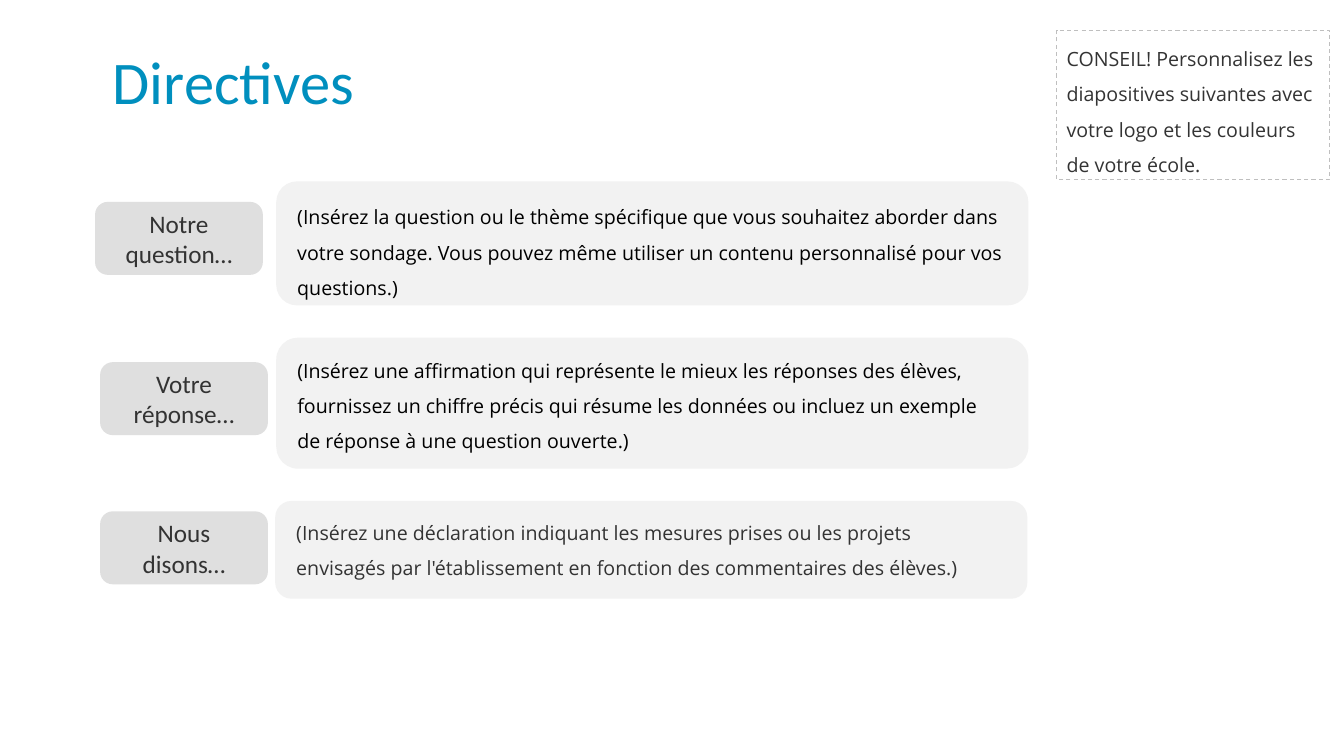
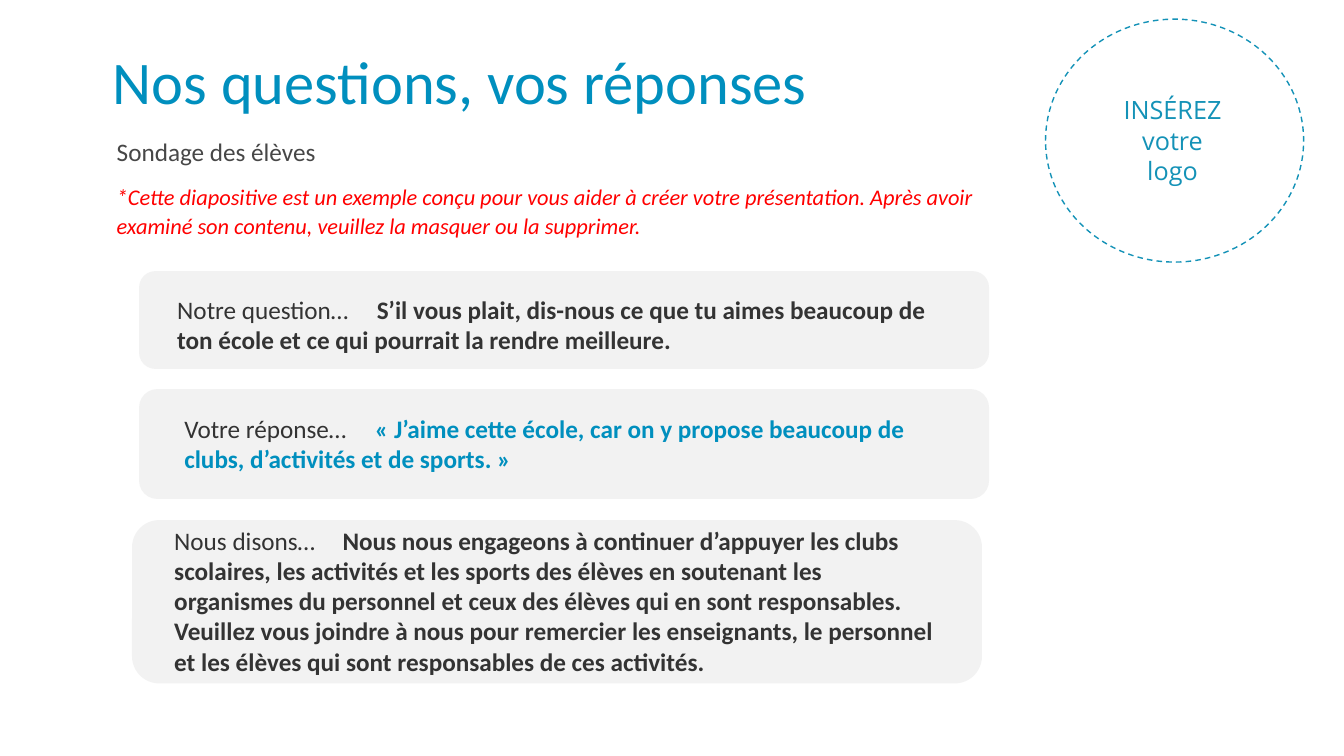
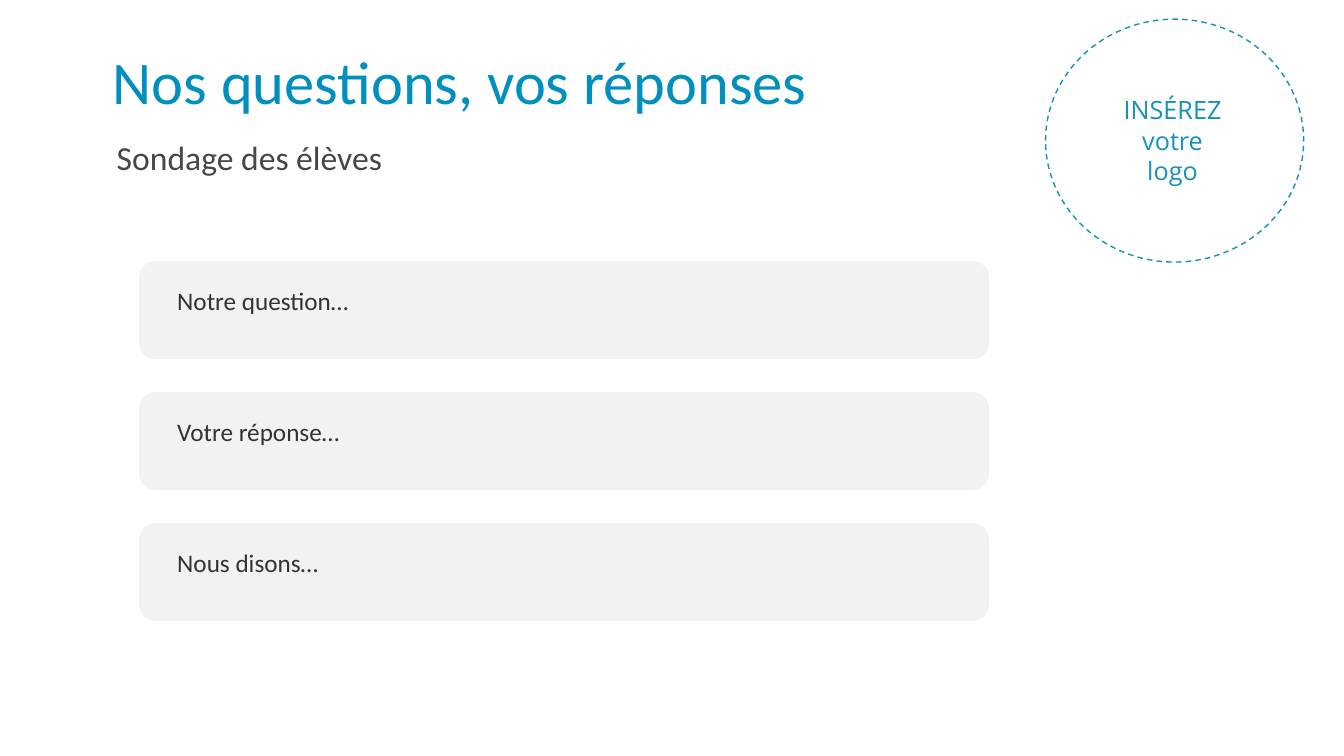
from dataclasses import dataclass

from lxml import etree
from pptx import Presentation
from pptx.dml.color import RGBColor
from pptx.enum.dml import MSO_LINE
from pptx.enum.shapes import MSO_SHAPE
from pptx.enum.text import MSO_ANCHOR, PP_ALIGN
from pptx.oxml.ns import qn
from pptx.util import Inches, Pt

ROUNDED, ELLIPSE, RECT = MSO_SHAPE.ROUNDED_RECTANGLE, MSO_SHAPE.OVAL, MSO_SHAPE.RECTANGLE
LEFT, CENTER = PP_ALIGN.LEFT, PP_ALIGN.CENTER
TOP, MIDDLE = MSO_ANCHOR.TOP, MSO_ANCHOR.MIDDLE
DASH = MSO_LINE.DASH


@dataclass(frozen=True)
class Theme:
    title_font: str = "Calibri"
    note_font: str = "Open Sans"
    blue: str = "008FBE"
    logo_blue: str = "1492B7"
    ink: str = "333333"
    black: str = "000000"
    subtitle: str = "474747"
    warning: str = "FF0000"
    card: str = "F2F2F2"
    label: str = "DFDFDF"
    tip_line: str = "BFBFBF"
    title_size: float = 43.2
    survey_size: float = 24
    text_size: float = 18
    warning_size: float = 16
    note_size: float = 14


THEME = Theme()

# Content
GUIDE_TITLE = "Directives"
QA_TITLE = "Nos questions, vos réponses"
SURVEY = "Sondage des élèves"
QUESTION, ANSWER, REPLY = LABELS = ("Notre question…", "Votre réponse…", "Nous disons…")
TIP = ("CONSEIL! Personnalisez les diapositives suivantes avec votre logo "
       "et les couleurs de votre école.")
WARNING = ("*Cette diapositive est un exemple conçu pour vous aider à créer votre présentation. "
           "Après avoir examiné son contenu, veuillez la masquer ou la supprimer.")
LOGO_PROMPT = ("INSÉREZ votre", "logo")

# label, label place, card place, instruction, instruction place, colour
GUIDE_ROWS = [
    (QUESTION, (0.95, 2.01), (2.74, 1.8, 7.46, 1.23),
     "(Insérez la question ou le thème spécifique que vous souhaitez aborder dans votre sondage. "
     "Vous pouvez même utiliser un contenu personnalisé pour vos questions.)",
     (2.85, 1.87, 7.46, 1.12), THEME.black),
    (ANSWER, (1, 3.6), (2.74, 3.35, 7.46, 1.3),
     "(Insérez une affirmation qui représente le mieux les réponses des élèves, fournissez un "
     "chiffre précis qui résume les données ou incluez un exemple de réponse à une question "
     "ouverte.)",
     (2.85, 3.39, 7.22, 1.12), THEME.black),
    (REPLY, (1, 5.08), (2.73, 4.97, 7.46, 0.97),
     "(Insérez une déclaration indiquant les mesures prises ou les projets envisagés par "
     "l'établissement en fonction des commentaires des élèves.)",
     (2.84, 5, 7.24, 0.77), THEME.ink),
]

# label, statement, colour, card place, text place, tab stop
EXAMPLE_ROWS = [
    (QUESTION,
     "S’il vous plait, dis-nous ce que tu aimes beaucoup de ton école et ce qui pourrait la "
     "rendre meilleure.",
     THEME.ink, (1.38, 2.69, 8.43, 0.97), (1.66, 2.87, 7.74, 0.71), 1.98),
    (ANSWER,
     "« J’aime cette école, car on y propose beaucoup de clubs, d’activités et de sports. »",
     THEME.blue, (1.38, 3.86, 8.43, 1.09), (1.73, 4.05, 7.74, 0.71), 1.89),
    (REPLY,
     "Nous nous engageons à continuer d’appuyer les clubs scolaires, les activités et les sports "
     "des élèves en soutenant les organismes du personnel et ceux des élèves qui en sont "
     "responsables. Veuillez vous joindre à nous pour remercier les enseignants, le personnel et "
     "les élèves qui sont responsables de ces activités.",
     THEME.ink, (1.31, 5.16, 8.43, 1.62), (1.63, 5.16, 7.74, 1.62), 1.67),
]

LABEL_SIZE = (1.65, 0.71)
BLANK_CARD_TOP, BLANK_CARD_PITCH = 2.59, 1.3


# Drawing helpers
def inches(place):
    return [Inches(length) for length in place]


def add_shape(slide, kind, place, fill=None, line=None, weight=1, dash=None):
    shape = slide.shapes.add_shape(kind, *inches(place))
    shape.shadow.inherit = False
    if fill:
        shape.fill.solid()
        shape.fill.fore_color.rgb = RGBColor.from_string(fill)
    else:
        shape.fill.background()
    if line:
        shape.line.color.rgb = RGBColor.from_string(line)
        shape.line.width = Pt(weight)
        if dash:
            shape.line.dash_style = dash
    else:
        shape.line.fill.background()
    return shape


def add_text_box(slide, place):
    return slide.shapes.add_textbox(*inches(place))


def write(shape, *paragraphs, size=THEME.text_size, font=THEME.title_font, color=THEME.ink,
          align=LEFT, anchor=TOP, spacing=1.0, before=0, after=0, tab=None):
    """Each paragraph is a string or a list of (text, run format) pairs."""
    frame = shape.text_frame
    frame.word_wrap = True
    frame.vertical_anchor = anchor
    for index, runs in enumerate(paragraphs):
        paragraph = frame.add_paragraph() if index else frame.paragraphs[0]
        paragraph.alignment = align
        paragraph.line_spacing = spacing
        paragraph.space_before = Pt(before if index else 0)
        paragraph.space_after = Pt(after)
        if tab:
            stops = etree.SubElement(paragraph._p.get_or_add_pPr(), qn("a:tabLst"))
            etree.SubElement(stops, qn("a:tab"), pos=str(Inches(tab)), algn="l")
        for text, style in [(runs, {})] if isinstance(runs, str) else runs:
            run = paragraph.add_run()
            run.text = text
            run.font.name = font
            run.font.size = Pt(style.get("size", size))
            run.font.color.rgb = RGBColor.from_string(style.get("color", color))
            run.font.bold = style.get("bold", False)
            run.font.italic = style.get("italic", False)


def write_note(shape, text, color=THEME.ink):
    write(shape, text, size=THEME.note_size, font=THEME.note_font, color=color,
          spacing=1.5, after=6)


# Shared slide parts
def new_slide(deck, title):
    slide = deck.slides.add_slide(deck.slide_layouts[6])
    write(add_text_box(slide, (1.02, 0.33, 12.05, 0.87)), title, size=THEME.title_size,
          color=THEME.blue, anchor=MIDDLE, spacing=1.08)
    return slide


def add_logo_spot(slide):
    add_shape(slide, ELLIPSE, (10.37, 0.19, 2.56, 2.41), line=THEME.logo_blue, dash=DASH)
    write(add_text_box(slide, (10.76, 0.89, 1.74, 1.01)), *LOGO_PROMPT,
          font=THEME.note_font, color=THEME.logo_blue, align=CENTER)


def add_survey_name(slide, *paragraphs, width, size):
    write(add_text_box(slide, (1.06, 1.28, width, 0.71)), *paragraphs, size=size,
          color=THEME.subtitle, spacing=1.08, before=10)


# Slides
def build_guide(deck):
    slide = new_slide(deck, GUIDE_TITLE)
    for label, label_place, card_place, instruction, text_place, color in GUIDE_ROWS:
        add_shape(slide, ROUNDED, card_place, fill=THEME.card)
        write_note(add_text_box(slide, text_place), instruction, color)
        tag = add_shape(slide, ROUNDED, label_place + LABEL_SIZE, THEME.label, THEME.label)
        write(tag, label, align=CENTER, anchor=MIDDLE)
    tip = add_shape(slide, RECT, (10.48, 0.3, 2.71, 1.48), line=THEME.tip_line,
                    weight=0.75, dash=DASH)
    write_note(tip, TIP)


def build_example(deck):
    slide = new_slide(deck, QA_TITLE)
    add_logo_spot(slide)
    warning_style = {"size": THEME.warning_size, "color": THEME.warning, "italic": True}
    add_survey_name(slide, SURVEY, [(WARNING, warning_style)], width=8.87,
                    size=THEME.text_size)
    for label, statement, color, card_place, text_place, tab in EXAMPLE_ROWS:
        add_shape(slide, ROUNDED, card_place, fill=THEME.card)
        write(add_text_box(slide, text_place),
              [(label + "\t", {}), (statement, {"bold": True, "color": color})], tab=tab)


def build_blank_form(deck):
    slide = new_slide(deck, QA_TITLE)
    add_logo_spot(slide)
    add_survey_name(slide, SURVEY, width=8.34, size=THEME.survey_size)
    for row, label in enumerate(LABELS):
        top = BLANK_CARD_TOP + row * BLANK_CARD_PITCH
        add_shape(slide, ROUNDED, (1.38, top, 8.43, 0.97), fill=THEME.card)
        write(add_text_box(slide, (1.66, top + 0.19, 7.74, 0.4)), label)


def main():
    deck = Presentation()
    deck.slide_width, deck.slide_height = Inches(13.33), Inches(7.5)
    build_guide(deck)
    build_example(deck)
    build_blank_form(deck)
    deck.save("out.pptx")


if __name__ == "__main__":
    main()
